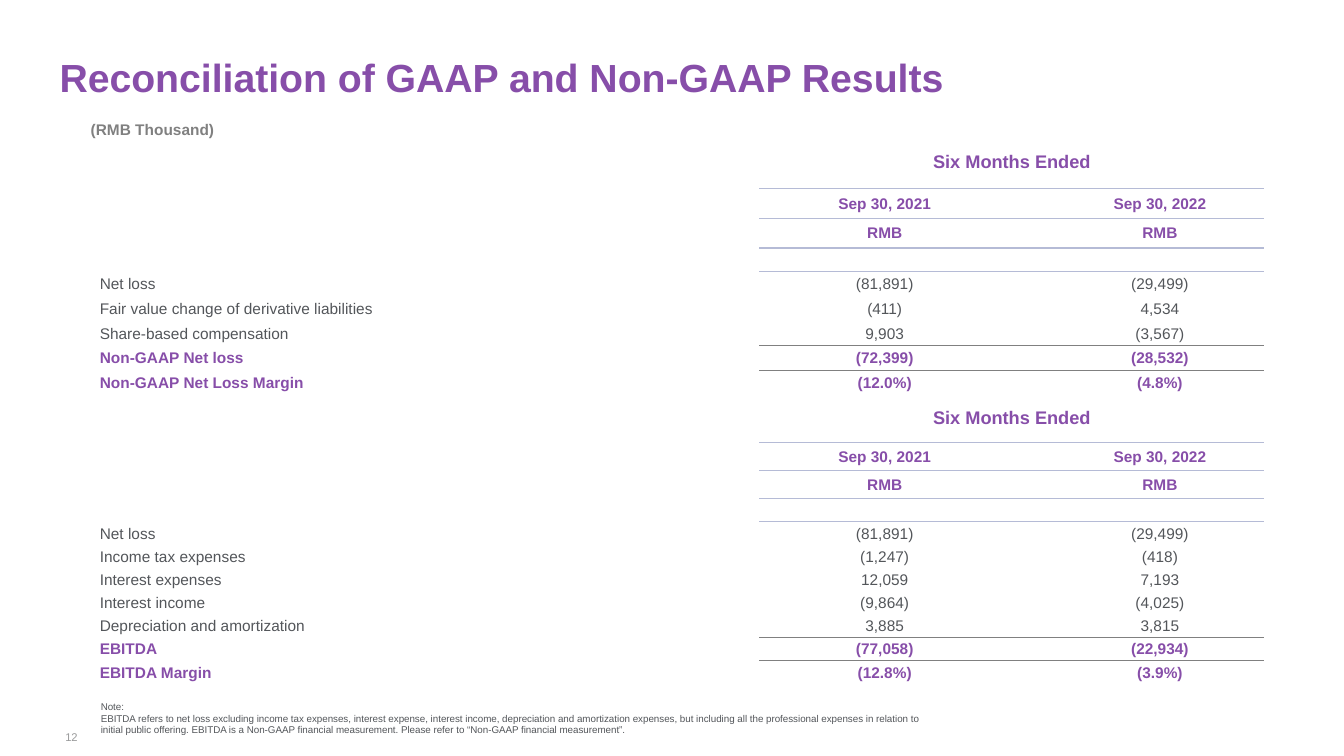
from dataclasses import dataclass

from lxml import etree
from pptx import Presentation
from pptx.dml.color import RGBColor
from pptx.enum.text import MSO_ANCHOR, MSO_AUTO_SIZE, PP_ALIGN
from pptx.oxml.ns import qn
from pptx.util import Emu, Pt

LEFT, MID, RIGHT = PP_ALIGN.LEFT, PP_ALIGN.CENTER, PP_ALIGN.RIGHT
TOP, CENTER = MSO_ANCHOR.TOP, MSO_ANCHOR.MIDDLE
FIXED = MSO_AUTO_SIZE.NONE
SCALE = 4572
FONT = "Arial"
PURPLE, SLATE, GRAY, PALE, RULE = "874EA9", "53565A", "808080", "999A9B", "B5BBD6"
PLAIN_STYLE = "{2D5ABB26-0587-4C30-8999-92F81FD0307C}"
COLS = [1260, 66, 498, 90, 414]
DATES = ("Sep 30, 2021", "Sep 30, 2022")
HEAD = 5


@dataclass
class Style:
    size: int
    color: str
    bold: bool = False
    align: PP_ALIGN = LEFT


@dataclass
class Note:
    x: int
    y: int
    w: int
    h: int
    lines: list[str]
    style: Style
    pad: int = 0
    anchor: MSO_ANCHOR = TOP


@dataclass
class Item:
    label: str
    old: str
    new: str
    bold: bool = False


@dataclass
class Grid:
    y: int
    heads: list[int]
    step: int
    items: list[Item]
    spare: int = 0


NOTES = [
    Note(180, 238, 274, 38, ["(RMB Thousand)"], Style(11, GRAY, True)),
    Note(200, 1390, 1668, 70, [
        "Note:",
        "EBITDA refers to net loss excluding income tax expenses, interest expense, "
        "interest income, depreciation and amortization expenses, but including all "
        "the professional expenses in relation to initial public offering. EBITDA is "
        "a Non-GAAP financial measurement. Please refer to “Non-GAAP financial "
        "measurement”.",
    ], Style(7, SLATE)),
    Note(108, 1446, 66, 32, ["12"], Style(8, PALE, align=RIGHT), 20, CENTER),
]

GRIDS = [
    Grid(268, [60, 46, 59, 59, 47], 49, [
        Item("Net loss", "(81,891)", "(29,499)"),
        Item("Fair value change of derivative liabilities", "(411)", "4,534"),
        Item("Share-based compensation", "9,903", "(3,567)"),
        Item("Non-GAAP Net loss", "(72,399)", "(28,532)", True),
        Item("Non-GAAP Net Loss Margin", "(12.0%)", "(4.8%)", True),
    ]),
    Grid(780, [54, 44, 56, 56, 45], 46, [
        Item("Net loss", "(81,891)", "(29,499)"),
        Item("Income tax expenses", "(1,247)", "(418)"),
        Item("Interest expenses", "12,059", "7,193"),
        Item("Interest income", "(9,864)", "(4,025)"),
        Item("Depreciation and amortization", "3,885", "3,815"),
        Item("EBITDA", "(77,058)", "(22,934)", True),
        Item("EBITDA Margin", "(12.8%)", "(3.9%)", True),
    ], 1),
]


def px(n: int) -> Emu:
    return Emu(n * SCALE)


def paint(font, color: str) -> None:
    font.color.rgb = RGBColor.from_string(color)


def write(para, text: str, style: Style) -> None:
    para.alignment = style.align
    run = para.add_run()
    run.text = text
    run.font.name = FONT
    run.font.size = Pt(style.size)
    run.font.bold = style.bold
    paint(run.font, style.color)


def frame(box, pad: int, anchor: MSO_ANCHOR) -> None:
    box.word_wrap = True
    box.auto_size = FIXED
    box.vertical_anchor = anchor
    box.margin_left = box.margin_right = px(pad)
    box.margin_top = box.margin_bottom = px(pad // 2)


def add_note(slide, note: Note) -> None:
    box = slide.shapes.add_textbox(*map(px, (note.x, note.y, note.w, note.h))).text_frame
    frame(box, note.pad, note.anchor)
    for i, line in enumerate(note.lines):
        para = box.add_paragraph() if i else box.paragraphs[0]
        write(para, line, note.style)


def add_rule(cell, color: str) -> None:
    line = etree.Element(qn("a:lnT"), w=str(Pt(1)))
    fill = etree.SubElement(line, qn("a:solidFill"))
    etree.SubElement(fill, qn("a:srgbClr"), val=color)
    cell._tc.get_or_add_tcPr().insert(0, line)


def reset(cell, inset: int) -> None:
    cell.fill.background()
    cell.vertical_anchor = CENTER
    cell.margin_left = px(inset)
    cell.margin_right = cell.margin_top = px(2)
    cell.margin_bottom = px(0)
    para = cell.text_frame.paragraphs[0]
    etree.SubElement(para._p, qn("a:endParaRPr"), sz="1100")


def add_grid(slide, grid: Grid) -> None:
    rows = grid.heads + [grid.step] * (len(grid.items) + grid.spare)
    shape = slide.shapes.add_table(len(rows), len(COLS), px(180), px(grid.y),
                                   px(sum(COLS)), px(sum(rows)))
    table = shape.table
    table.first_row = table.horz_banding = False
    table._tbl.tblPr.find(qn("a:tableStyleId")).text = PLAIN_STYLE
    for col, width in zip(table.columns, COLS):
        col.width = px(width)
    for i, height in enumerate(rows):
        table.rows[i].height = px(height)
        for j in range(len(COLS)):
            reset(table.cell(i, j), 18 if j == 0 and i >= HEAD else 2)

    def put(i: int, j: int, text: str, style: Style) -> None:
        write(table.cell(i, j).text_frame.paragraphs[0], text, style)

    table.cell(0, 0).merge(table.cell(1, 0))
    table.cell(0, 2).merge(table.cell(1, 4))
    put(0, 2, "Six Months Ended", Style(13, PURPLE, True, MID))
    for j, date in zip((2, 4), DATES):
        put(2, j, date, Style(11, PURPLE, True, MID))
        put(3, j, "RMB", Style(11, PURPLE, True, MID))
    for i, item in enumerate(grid.items, HEAD):
        color = PURPLE if item.bold else SLATE
        put(i, 0, item.label, Style(11, color, item.bold))
        for j, value in ((2, item.old), (4, item.new)):
            put(i, j, value, Style(11, color, item.bold, MID))

    total = HEAD + [item.bold for item in grid.items].index(True)
    rules = [(2, (2, 3, 4), RULE), (3, (2, 4), RULE),
             (4, (2, 3, 4), RULE), (total, (2, 3, 4), GRAY)]
    for i, cols, color in rules:
        for j in cols:
            add_rule(table.cell(i, j), color)


def add_title(slide) -> None:
    title = slide.shapes.title
    title.left, title.top, title.width, title.height = map(px, (118, 106, 2100, 94))
    frame(title.text_frame, 0, TOP)
    write(title.text_frame.paragraphs[0], "Reconciliation of GAAP and Non-GAAP Results",
          Style(28, PURPLE, True))


def main() -> None:
    deck = Presentation()
    deck.slide_width, deck.slide_height = px(2666), px(1500)
    slide = deck.slides.add_slide(deck.slide_layouts[5])
    add_title(slide)
    for grid in GRIDS:
        add_grid(slide, grid)
    for note in NOTES:
        add_note(slide, note)
    deck.save("out.pptx")


if __name__ == "__main__":
    main()
